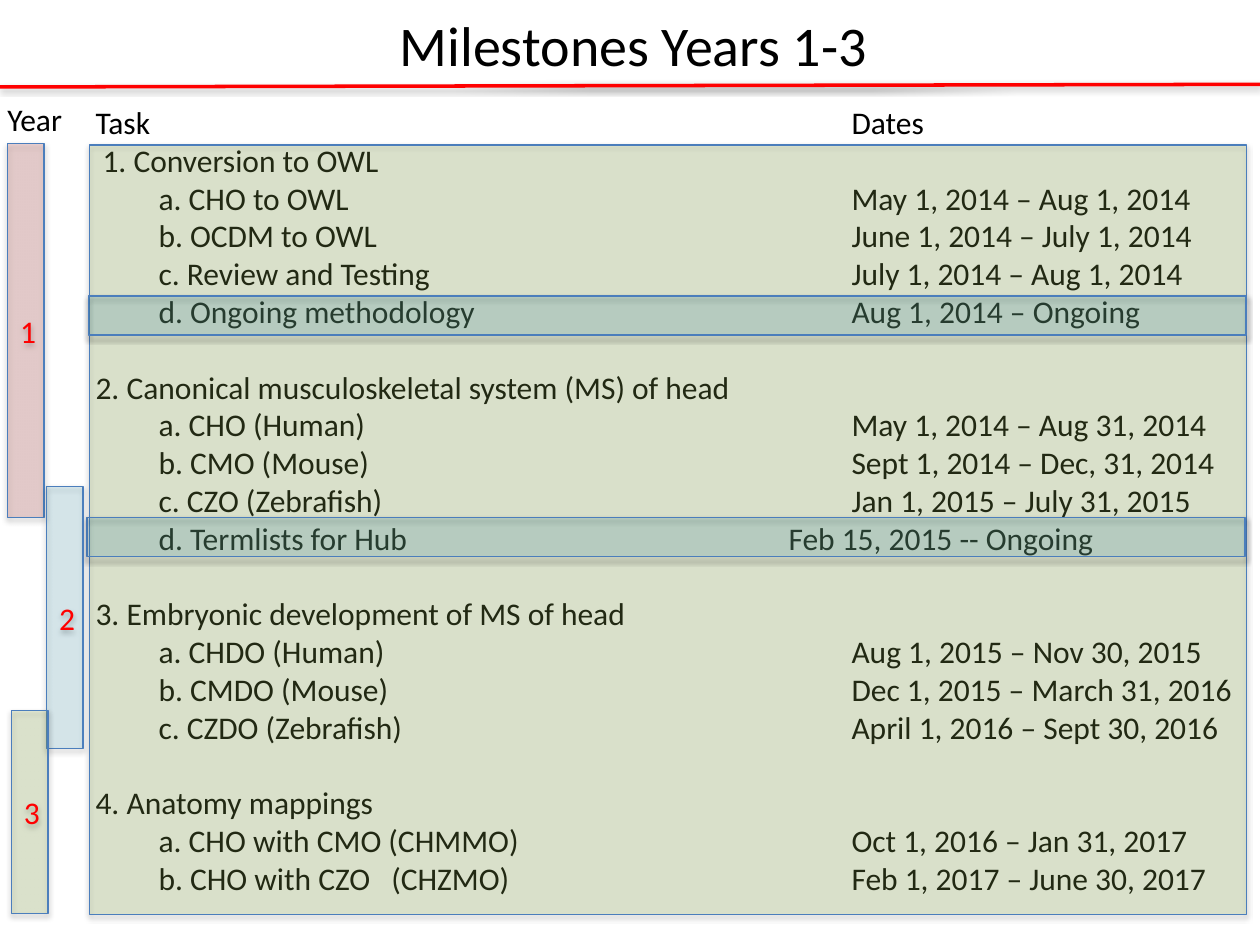
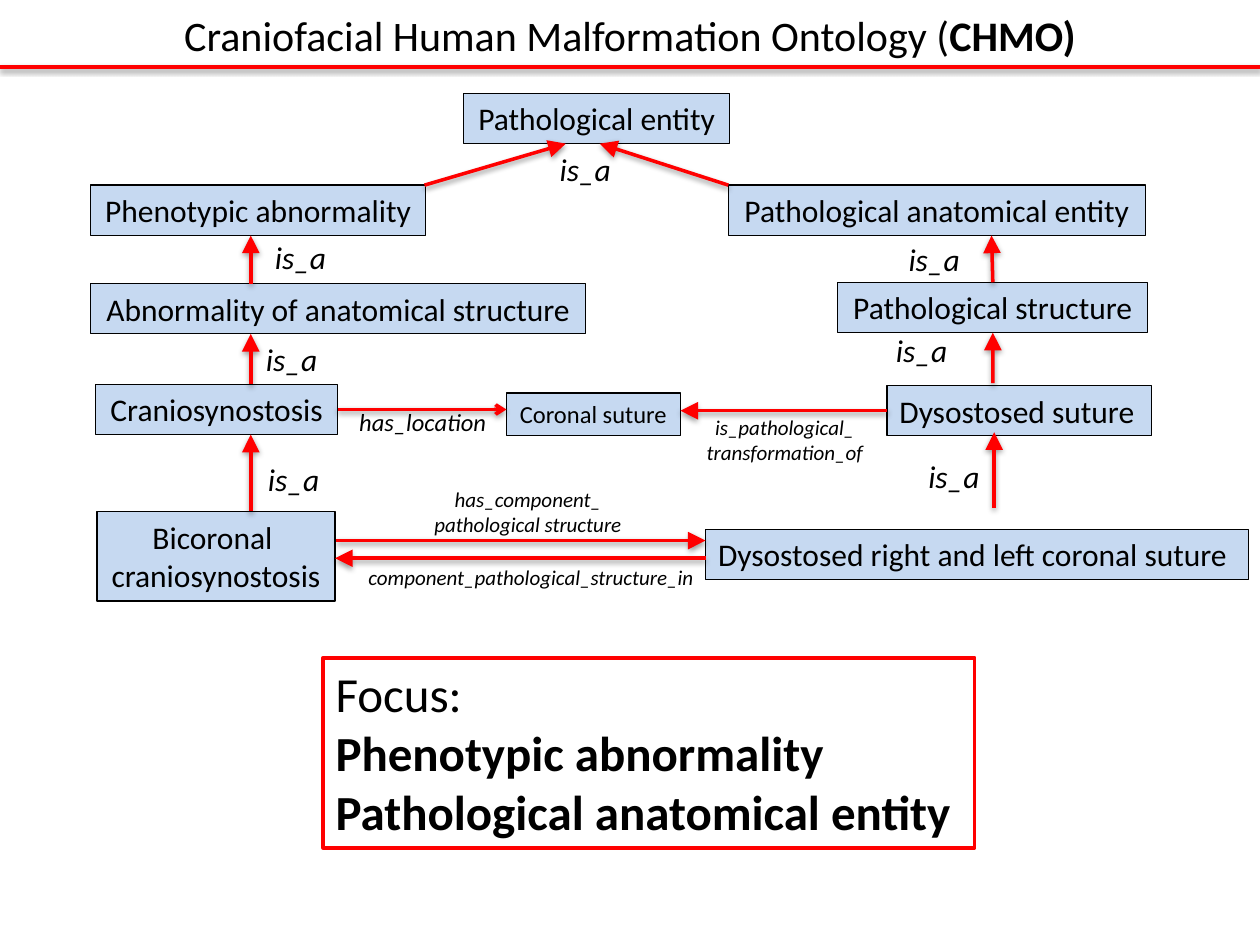
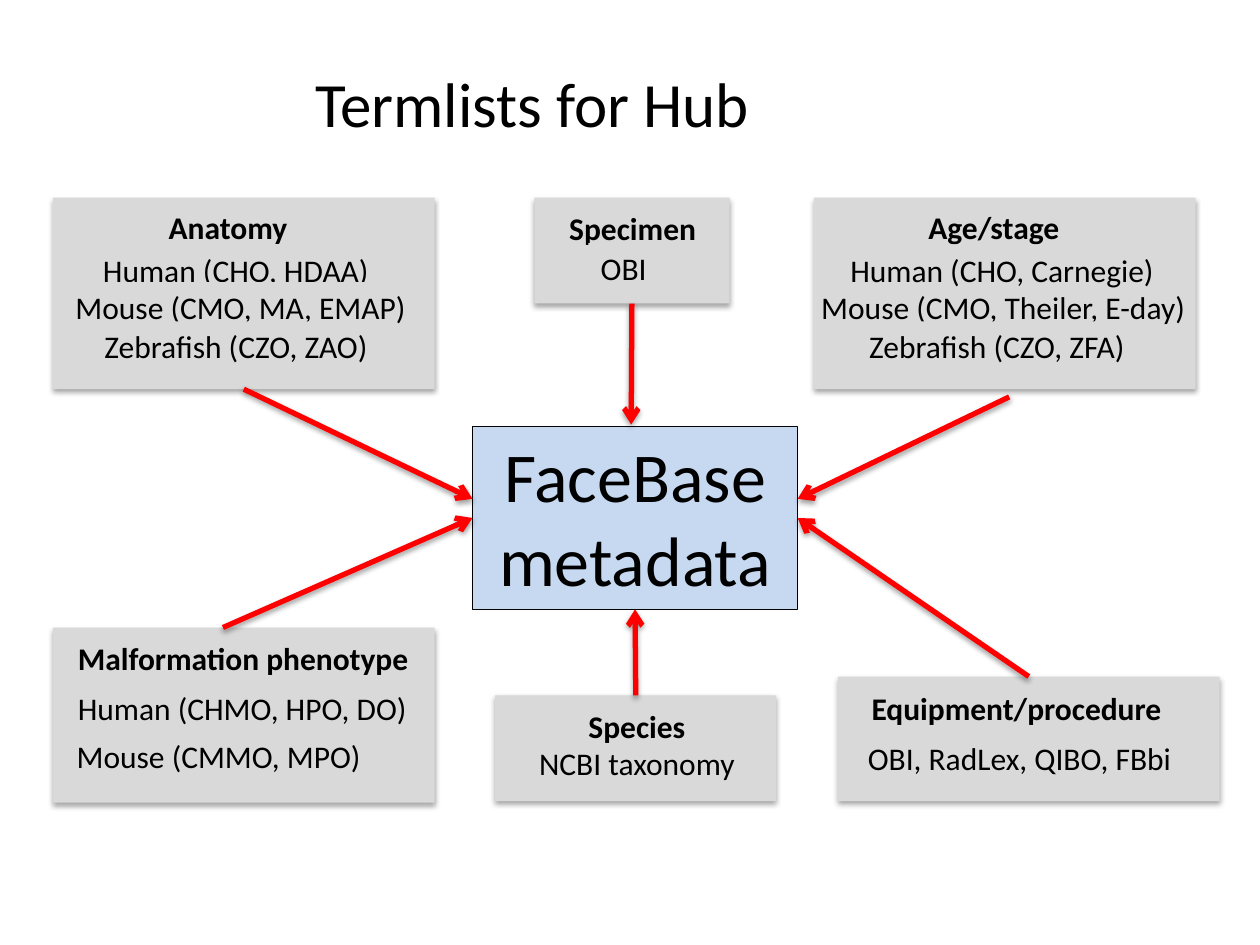
from lxml import etree
from pptx import Presentation
from pptx import util as u
from pptx.dml.color import RGBColor
from pptx.enum import shapes, text
from pptx.oxml.ns import qn

Pt = u.Pt
FONT = "Calibri"
BLACK = RGBColor(0x00, 0x00, 0x00)
RED = RGBColor(0xFF, 0x00, 0x00)
SKY = RGBColor(0xC6, 0xD9, 0xF1)
GREY = RGBColor(0xD9, 0xD9, 0xD9)
GREEN = RGBColor(0x9B, 0xBB, 0x59)
TEAL = RGBColor(0x4B, 0xAC, 0xC6)
BRICK = RGBColor(0xC0, 0x50, 0x4D)
EDGE = RGBColor(0x4B, 0x7E, 0xBC)
OPACITY = {GREEN: 22, BRICK: 22, TEAL: 17}
HEAD_SIZE = {"triangle": "lg", "arrow": "med"}

LEFT, CENTER = text.PP_ALIGN.LEFT, text.PP_ALIGN.CENTER
TOP, MIDDLE = text.MSO_ANCHOR.TOP, text.MSO_ANCHOR.MIDDLE
UP, WEST, DOWN, EAST = range(4)
ROW_HEIGHT = 28.8
ROW_STOPS = (36, 432)

MILESTONES = [
    ("1. Conversion to OWL", [
        ("a. CHO to OWL", "May 1, 2014 – Aug 1, 2014", ROW_STOPS),
        ("b. OCDM to OWL", "June 1, 2014 – July 1, 2014", ROW_STOPS),
        ("c. Review and Testing", "July 1, 2014 – Aug 1, 2014", ROW_STOPS),
        ("d. Ongoing methodology", "Aug 1, 2014 – Ongoing", ROW_STOPS)]),
    ("2. Canonical musculoskeletal system (MS) of head", [
        ("a. CHO (Human)", "May 1, 2014 – Aug 31, 2014", ROW_STOPS),
        ("b. CMO (Mouse)", "Sept 1, 2014 – Dec, 31, 2014", ROW_STOPS),
        ("c. CZO (Zebrafish)", "Jan 1, 2015 – July 31, 2015", ROW_STOPS),
        ("d. Termlists for Hub", "Feb 15, 2015 -- Ongoing", (36, 396))]),
    ("3. Embryonic development of MS of head", [
        ("a. CHDO (Human)", "Aug 1, 2015 – Nov 30, 2015", ROW_STOPS),
        ("b. CMDO (Mouse)", "Dec 1, 2015 – March 31, 2016", ROW_STOPS),
        ("c. CZDO (Zebrafish)", "April 1, 2016 – Sept 30, 2016", ROW_STOPS)]),
    ("4. Anatomy mappings", [
        ("a. CHO with CMO (CHMMO)", "Oct 1, 2016 – Jan 31, 2017", ROW_STOPS),
        ("b. CHO with CZO\t(CHZMO)", "Feb 1, 2017 – June 30, 2017", (36, 169, 432))]),
]

ENTITIES = {
    "craniosynostosis": ((54.7, 219.6, 138.2, 28.8), ["Craniosynostosis"], 18, CENTER),
    "abnormality": ((51.8, 162, 283, 28.8), ["Abnormality of anatomical structure"], 18, CENTER),
    "phenotypic": ((51.8, 105.8, 191.5, 28.8), ["Phenotypic abnormality"], 18, CENTER),
    "anatomical": ((416.2, 105.8, 238.3, 28.8), ["Pathological anatomical entity"], 18, CENTER),
    "root": ((265, 53.3, 151.9, 28.8), ["Pathological entity"], 18, CENTER),
    "coronal": ((289.4, 224.6, 99.4, 24.5), ["Coronal suture"], 14, CENTER),
    "dysostosed": ((506.9, 220.3, 151.2, 28.8), ["Dysostosed suture"], 18, LEFT),
    "structure": ((478.8, 161.3, 177.1, 28.8), ["Pathological structure"], 18, CENTER),
    "bicoronal": ((55.4, 292.3, 136.1, 51.1), ["Bicoronal ", "craniosynostosis"], 18, CENTER),
    "both sutures": ((403.2, 302.4, 310.3, 28.8),
                     ["Dysostosed right and left coronal suture"], 18, LEFT),
}

RELATIONS = [
    ((143.3, 292.3), (143.3, 248.4), {}),
    ((143.3, 219.6), (143.3, 190.8), {}),
    ((143.3, 162), (143.3, 134.6), {}),
    ((416.2, 105.8), (342.7, 82.1), {}),
    ((242.6, 105.8), (323.3, 82.1), {}),
    (("craniosynostosis", EAST), (289.4, 234), {"head": "arrow"}),
    ((568.1, 290.2), (568.1, 247), {}),
    ((567.4, 218.9), ("structure", DOWN), {}),
    (("structure", UP), (566.6, 134.6), {}),
    (("dysostosed", WEST), (388.8, 234.7), {}),
    ((403.2, 319), (191.5, 319), {}),
    ((192.2, 308.9), (403.2, 308.9), {}),
]

IS_A_SPOTS = [(143.3, 259.2, 49), (138.2, 190.8, 56.9), (143.3, 132.5, 56.9),
              (306, 82.1, 56.9), (520.6, 257.8, 49), (505.4, 133.9, 56.9),
              (498.2, 185.8, 56.9)]

RELATION_LABELS = [
    ((195.1, 229, 92.9, 24.5), ["has_location"], 14),
    ((375.8, 233.3, 145.4, 36), ["is_pathological_", "transformation_of"], 12),
    ((229, 274.3, 145.4, 36), ["has_component_", "pathological structure"], 12),
    ((191.5, 319, 223.9, 21.6), ["component_pathological_structure_in"], 12),
]

TERMLISTS = {
    "anatomy": ((30.2, 113, 218.2, 109.4), [
        (89.3, 115.2, 84.2, ["Anatomy"]),
        (51.8, 139.7, 168.5, ["Human (CHO, HDAA)"]),
        (36, 161.3, 205.2, ["Mouse (CMO, MA, EMAP)"]),
        (52.6, 183.6, 167.8, ["Zebrafish (CZO, ZAO)"])]),
    "equipment": ((478.8, 386.6, 218.2, 71.3), [
        (491, 390.2, 182.9, ["Equipment/procedure"]),
        (488.9, 419, 190.1, ["OBI, RadLex, QIBO, FBbi"])]),
    "malformation": ((30.2, 358.6, 218.2, 100.1), [
        (37.4, 361.4, 205.9, ["Malformation phenotype"]),
        (37.4, 390.2, 205.2, ["Human (CHMO, HPO, DO)"]),
        (36.7, 417.6, 178.6, ["Mouse (CMMO, MPO)"])]),
    "specimen": ((305.3, 113, 111.6, 60.5), [
        (318.2, 115.9, 87.8, ["Specimen"]),
        (336.2, 139, 41, ["OBI"])]),
    "species": ((283, 397.4, 160.6, 60.5), [
        (298.1, 400.3, 131.8, ["Species", "NCBI taxonomy"])]),
    "age": ((465.1, 113, 218.2, 109.4), [
        (523.4, 115.2, 91.4, ["Age/stage"]),
        (478.8, 139.7, 190.1, ["Human (CHO, Carnegie)"]),
        (462.2, 161.3, 226.8, ["Mouse (CMO, Theiler, E-day)"]),
        (489.6, 183.6, 164.2, ["Zebrafish (CZO, ZFA)"])]),
}

FEEDS = [
    ((576.7, 226.8), (455.8, 285.1)),
    (("anatomy", DOWN), (270, 285.1)),
    (("equipment", UP), ("metadata", EAST)),
    ((127.4, 358.6), ("metadata", WEST)),
    (("specimen", DOWN), (360.7, 242.6)),
    (("species", UP), ("metadata", DOWN)),
]


def add_run(paragraph, words, size, color=BLACK, bold=False, italic=False):
    """Append one formatted run."""
    run = paragraph.add_run()
    run.text = words
    font = run.font
    font.name, font.size, font.bold, font.italic = FONT, Pt(size), bold, italic
    font.color.rgb = color


def write(frame, lines, size, align=CENTER, anchor=TOP, bold_lines=(), **style):
    """Fill a text frame with one paragraph per line."""
    frame.word_wrap = align == LEFT
    frame.auto_size = text.MSO_AUTO_SIZE.NONE
    frame.vertical_anchor = anchor
    for index, words in enumerate(lines):
        paragraph = frame.add_paragraph() if index else frame.paragraphs[0]
        paragraph.alignment = align
        add_run(paragraph, words, size, bold=index in bold_lines, **style)


def cast_shadow(properties, opacity, distance):
    """Add a soft shadow falling straight down."""
    effects = properties.find(qn("a:effectLst"))
    if effects is None:
        effects = etree.SubElement(properties, qn("a:effectLst"))
    shadow = etree.SubElement(effects, qn("a:outerShdw"), blurRad=str(Pt(3.15)),
                              dist=str(Pt(distance)), dir="5400000", rotWithShape="0")
    color = etree.SubElement(shadow, qn("a:srgbClr"), val=str(BLACK))
    etree.SubElement(color, qn("a:alpha"), val=str(opacity * 1000))


def add_box(parent, bounds, fill=None, edge=None, weight=0.75, shadow=False):
    """Draw a rectangle, translucent where its fill calls for it."""
    box = parent.add_shape(shapes.MSO_SHAPE.RECTANGLE, *map(Pt, bounds))
    if fill is None:
        box.fill.background()
    else:
        box.fill.solid()
        box.fill.fore_color.rgb = fill
    if fill in OPACITY:
        tint = box.element.spPr.find(qn("a:solidFill")).find(qn("a:srgbClr"))
        etree.SubElement(tint, qn("a:alpha"), val=str(OPACITY[fill] * 1000))
    if edge is None:
        box.line.fill.background()
    else:
        box.line.color.rgb = edge
        box.line.width = Pt(weight)
    box.shadow.inherit = False
    if shadow:
        cast_shadow(box.element.spPr, 35, 1.8)
    return box


def add_label(slide, bounds, lines, size, **style):
    """Add free text."""
    label = slide.shapes.add_textbox(*map(Pt, bounds))
    write(label.text_frame, lines, size, **style)


def add_red_line(slide, start, end, boxes=None, weight=2, head=None):
    """Draw a red line between points or (box name, side) joints."""
    joints = [isinstance(spot[0], str) for spot in (start, end)]
    ends = [(0, 0) if joint else spot for joint, spot in zip(joints, (start, end))]
    line = slide.shapes.add_connector(shapes.MSO_CONNECTOR.STRAIGHT,
                                      *map(Pt, ends[0] + ends[1]))
    if joints[0]:
        line.begin_connect(boxes[start[0]], start[1])
    if joints[1]:
        line.end_connect(boxes[end[0]], end[1])
    line.line.color.rgb = RED
    line.line.width = Pt(weight)
    properties = line.element.spPr
    if head:
        etree.SubElement(properties.find(qn("a:ln")), qn("a:tailEnd"), type=head,
                         w=HEAD_SIZE[head], len=HEAD_SIZE[head])
    cast_shadow(properties, 38, 1.57)


def add_slide(deck, bounds, size, title, strong="", align=CENTER):
    """Add a slide with its title in place."""
    slide = deck.slides.add_slide(deck.slide_layouts[5])
    heading = slide.shapes.title
    heading.left, heading.top, heading.width, heading.height = map(Pt, bounds)
    write(heading.text_frame, [title], size, align, MIDDLE)
    if strong:
        add_run(heading.text_frame.paragraphs[0], strong, size, bold=True)
    return slide


def add_row(paragraph, words, stops=(), before=0, indent=0):
    """Write one schedule row aligned on tab stops."""
    properties = paragraph._p.get_or_add_pPr()
    if indent:
        properties.set("marL", str(Pt(indent)))
    if stops:
        tabs = etree.SubElement(properties, qn("a:tabLst"))
        for stop in stops:
            etree.SubElement(tabs, qn("a:tab"), pos=str(Pt(stop)), algn="l")
    paragraph.space_before = Pt(before)
    add_run(paragraph, words, 18)


def add_milestones(deck):
    """Build the schedule of tasks by year."""
    slide = add_slide(deck, (218, 2.2, 288, 46), 32, "Milestones Years 1-3")
    schedule = slide.shapes.add_textbox(*map(Pt, (47.5, 55.4, 672, 487.4)))
    frame = schedule.text_frame
    frame.word_wrap = True
    add_row(frame.paragraphs[0], "Task\tDates", ROW_STOPS[1:])
    for index, (task, steps) in enumerate(MILESTONES):
        add_row(frame.add_paragraph(), task, before=21.6 if index else 0,
                indent=0 if index else 4)
        for step, dates, stops in steps:
            add_row(frame.add_paragraph(), f"\t{step}\t{dates}", stops)
    for bounds, fill in [((51.1, 82.8, 661, 439.9), GREEN),
                         ((50.4, 169.2, 661.7, 22.3), TEAL),
                         ((49.7, 295.9, 661.7, 22.3), TEAL)]:
        add_box(slide.shapes, bounds, fill, EDGE, shadow=True)
    add_red_line(slide, (0, 49.7), (720, 48.2))
    years = [((4.3, 82.1, 20.9, 213.8), BRICK), ((26.6, 277.9, 20.9, 149.8), TEAL),
             ((6.5, 406.1, 20.9, 115.9), GREEN)]
    for year, (bounds, fill) in enumerate(years, 1):
        bar = add_box(slide.shapes, bounds, fill, EDGE, shadow=True)
        bar.text_frame.margin_left, bar.text_frame.margin_right = Pt(2.5), Pt(0)
        write(bar.text_frame, [str(year)], 18, anchor=MIDDLE, color=RED)
    add_label(slide, (-2.9, 53.5, 53.3, ROW_HEIGHT), ["Year"], 18, align=LEFT)


def add_ontology(deck):
    """Build the malformation ontology graph."""
    slide = add_slide(deck, (0, 1.8, 720, 36), 24,
                      "Craniofacial Human Malformation Ontology (", "CHMO)")
    add_red_line(slide, (0, 38.2), (720, 38.2))
    entities = {}
    for name, (bounds, lines, size, align) in ENTITIES.items():
        entities[name] = add_box(slide.shapes, bounds, SKY, BLACK)
        write(entities[name].text_frame, lines, size, align)
    for start, end, options in RELATIONS:
        add_red_line(slide, start, end, entities, **{"head": "triangle", **options})
    for left, top, width in IS_A_SPOTS:
        add_label(slide, (left, top, width, ROW_HEIGHT), ["is_a"], 18, italic=True)
    for bounds, lines, size in RELATION_LABELS:
        add_label(slide, bounds, lines, size, italic=True)
    focus = add_box(slide.shapes, (184.7, 375.8, 372.2, 108.7), edge=RED, weight=2.25)
    write(focus.text_frame,
          ["Focus:", "Phenotypic abnormality", "Pathological anatomical entity"],
          28, LEFT, bold_lines=(1, 2))


def add_termlists(deck):
    """Build the term lists that feed the hub metadata."""
    slide = add_slide(deck, (172.8, 32.7, 269.3, 51.1), 36,
                      "Termlists for Hub", align=LEFT)
    hub = add_box(slide.shapes, (270, 243.8, 185.8, 104.4), SKY, BLACK)
    write(hub.text_frame, ["FaceBase", "metadata"], 40)
    boxes = {"metadata": hub}
    for name, (bounds, terms) in TERMLISTS.items():
        card = slide.shapes.add_group_shape().shapes
        boxes[name] = add_box(card, bounds, GREY, shadow=True)
        for index, (left, top, width, lines) in enumerate(terms):
            overhangs = left < bounds[0]
            term = add_box(card, (left, top, width, ROW_HEIGHT + 22 * (len(lines) - 1)),
                           None if overhangs else GREY)
            write(term.text_frame, lines, 18, CENTER if len(lines) > 1 else LEFT,
                  bold_lines=() if index else (0,))
    for start, end in FEEDS:
        add_red_line(slide, start, end, boxes, weight=3, head="arrow")


def main():
    """Build and save the three slides."""
    deck = Presentation()
    deck.slide_width, deck.slide_height = Pt(720), Pt(540)
    add_milestones(deck)
    add_ontology(deck)
    add_termlists(deck)
    deck.save("out.pptx")


if __name__ == "__main__":
    main()
